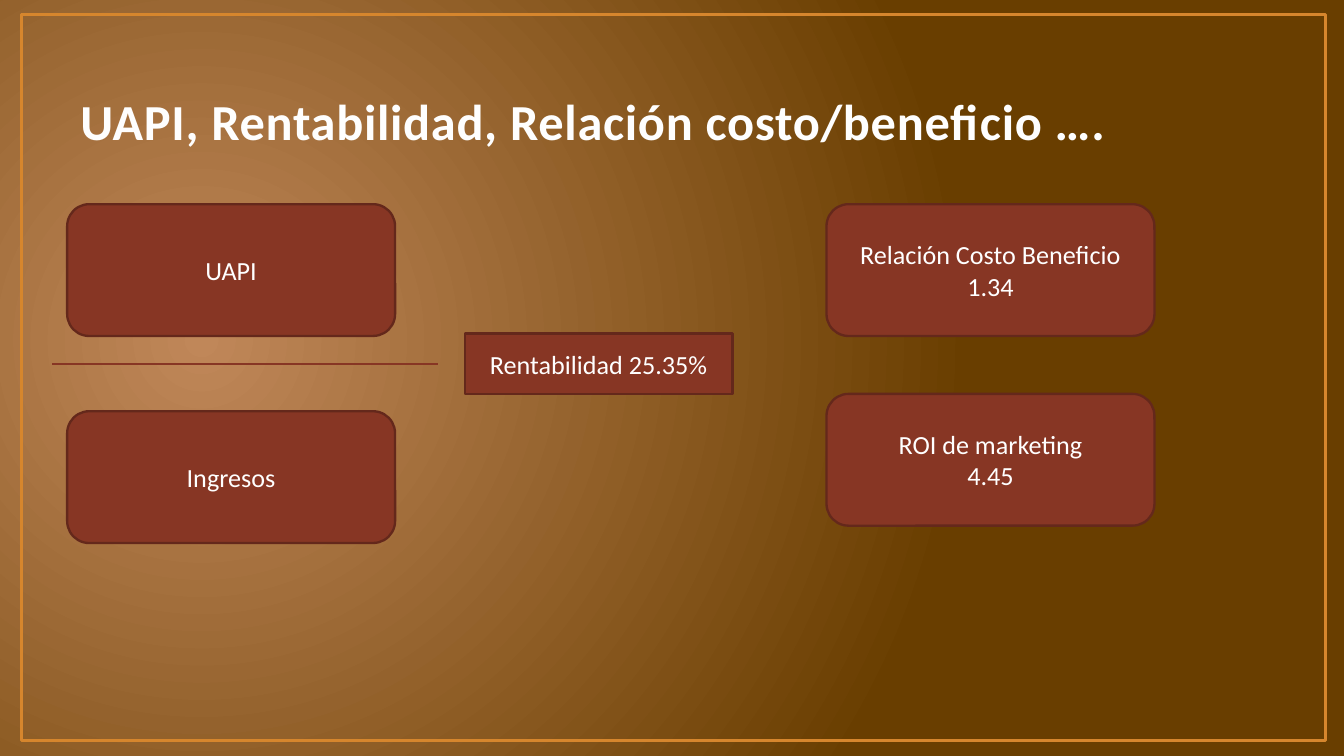
from lxml.etree import SubElement as Sub
from pptx import Presentation
from pptx.dml.color import RGBColor as Rgb
from pptx.enum.shapes import MSO_CONNECTOR as Link, MSO_SHAPE as Kind
from pptx.enum.text import MSO_ANCHOR as Anchor, PP_ALIGN as Align
from pptx.oxml import parse_xml
from pptx.oxml.ns import nsdecls, qn
from pptx.util import Pt

TITLE = "UAPI, Rentabilidad, Relación costo/beneficio …."
CARDS = [
    (36, 109.4, ["UAPI"]),
    (36, 220.3, ["Ingresos"]),
    (442.8, 109.4, ["Relación Costo Beneficio", "1.34"]),
    (442.8, 211, ["ROI de marketing", "4.45"]),
]
RATIO = ["Rentabilidad 25.35%"]

THEME = {
    "font": "Calibri", "head": 27, "body": 14,
    "glow": "C08759", "dark": "693E00", "frame": "D6862D",
    "fill": "873624", "edge": "64281B", "rim": "441B12",
    "title": "FEFEFE", "text": "FFFFFF",
}
WIDE, HIGH = 720, 405
CARD = (175.7, 70.6)


def color(name):
    return Rgb.from_string(THEME[name])


def write(shape, lines, size="body", tint="text", bold=False,
          align=Align.CENTER, anchor=Anchor.MIDDLE):
    frame = shape.text_frame
    frame.word_wrap = True
    frame.vertical_anchor = anchor
    for i, line in enumerate(lines):
        para = frame.paragraphs[0] if i == 0 else frame.add_paragraph()
        para.alignment = align
        run = para.add_run()
        run.text = line
        run.font.name = THEME["font"]
        run.font.size = Pt(THEME[size])
        run.font.bold = bold
        run.font.color.rgb = color(tint)
    return shape


def box(slide, kind, area, fill="fill", edge="edge", width=1.25):
    shape = slide.shapes.add_shape(kind, *map(Pt, area))
    shape.shadow.inherit = False
    if fill:
        shape.fill.solid()
        shape.fill.fore_color.rgb = color(fill)
    else:
        shape.fill.background()
    shape.line.color.rgb = color(edge)
    shape.line.width = Pt(width)
    return shape


def paint(slide):
    slide.background.fill.gradient()
    old = slide.element.find(".//" + qn("a:gradFill"))
    new = parse_xml(
        f'<a:gradFill {nsdecls("a")} rotWithShape="1"><a:gsLst>'
        f'<a:gs pos="0"><a:srgbClr val="{THEME["glow"]}"/></a:gs>'
        f'<a:gs pos="100000"><a:srgbClr val="{THEME["dark"]}"/></a:gs>'
        '</a:gsLst><a:path path="circle">'
        '<a:fillToRect l="15000" t="50000" r="85000" b="60000"/>'
        '</a:path></a:gradFill>')
    old.getparent().replace(old, new)


def head(slide):
    shape = slide.shapes.add_textbox(Pt(36), Pt(16.6), Pt(648), Pt(67.7))
    write(shape, [TITLE], size="head", tint="title", bold=True,
          align=Align.LEFT, anchor=Anchor.BOTTOM)
    props = shape.text_frame.paragraphs[0].runs[0].font.fill
    props = shape.element.find(".//" + qn("a:rPr"))
    props.set("spc", "40")
    props.insert(0, parse_xml(
        f'<a:ln {nsdecls("a")} w="{Pt(1.05)}"><a:solidFill>'
        f'<a:srgbClr val="{THEME["rim"]}"/></a:solidFill></a:ln>'))


def rule(slide, x, y, end):
    line = slide.shapes.add_connector(
        Link.STRAIGHT, Pt(x), Pt(y), Pt(end), Pt(y))
    line.line.color.rgb = color("fill")
    line.line.width = Pt(0.75)
    Sub(line.element.spPr, qn("a:effectLst"))


def main():
    deck = Presentation()
    deck.slide_width, deck.slide_height = Pt(WIDE), Pt(HIGH)
    slide = deck.slides.add_slide(deck.slide_layouts[6])
    paint(slide)
    box(slide, Kind.RECTANGLE, (11.5, 7.9, 698.6, 388.8),
        fill=None, edge="frame", width=1.5)
    head(slide)
    for x, y, lines in CARDS:
        write(box(slide, Kind.FLOWCHART_ALTERNATE_PROCESS, (x, y, *CARD)),
              lines)
    rule(slide, 28.1, 195, 234.6)
    write(box(slide, Kind.RECTANGLE, (249.1, 178.6, 143.3, 32.4)), RATIO)
    deck.save("out.pptx")


if __name__ == "__main__":
    main()
